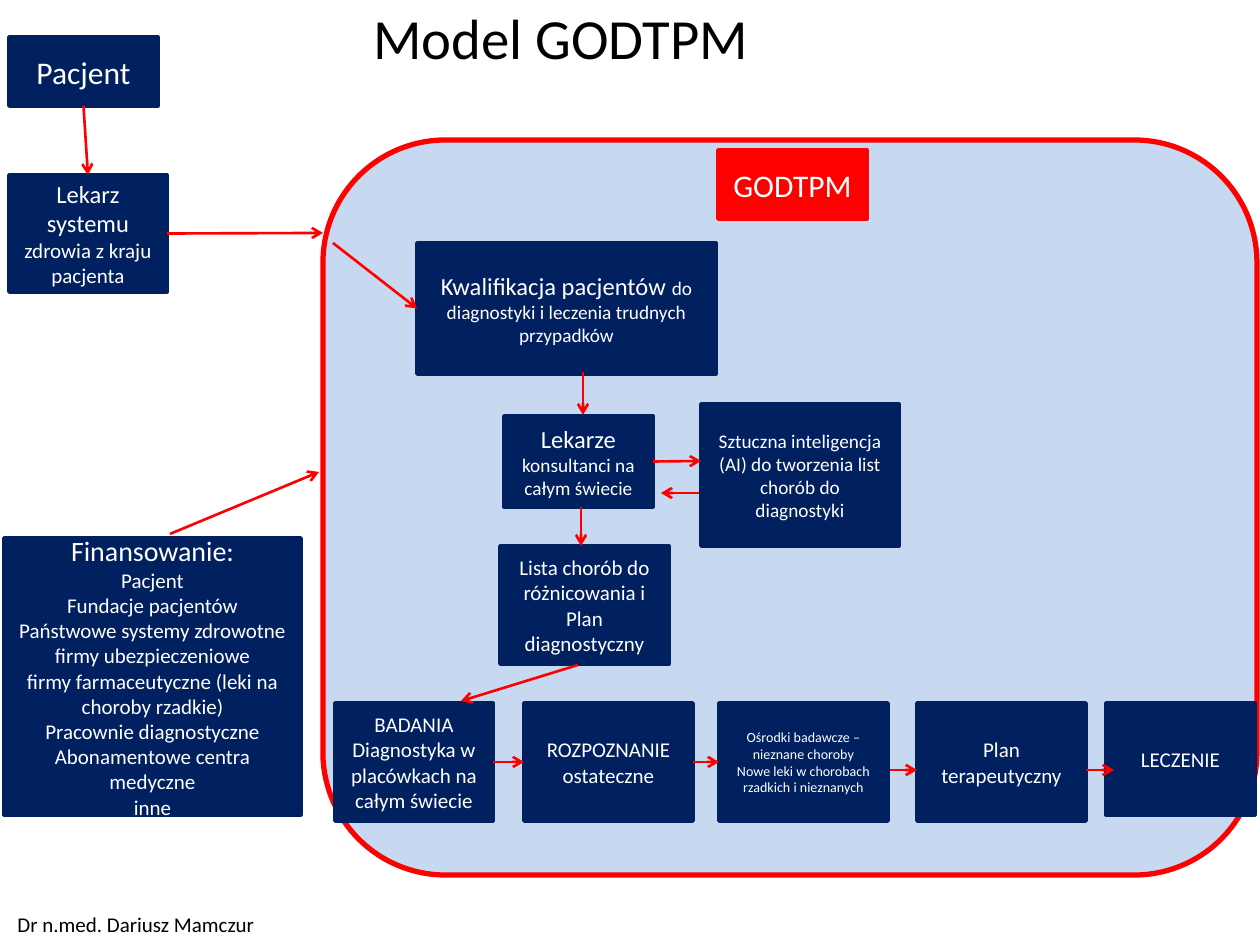
import dataclasses
import typing

import pptx
import pptx.dml.color
import pptx.enum.shapes
import pptx.enum.text
import pptx.oxml
import pptx.oxml.ns
import pptx.util

RGB = pptx.dml.color.RGBColor
NAVY = RGB(0x00, 0x20, 0x60)
RED = RGB(0xFF, 0x00, 0x00)
PALE = RGB(0xC6, 0xD9, 0xF1)
WHITE = RGB(0xFF, 0xFF, 0xFF)
BLACK = RGB(0x00, 0x00, 0x00)
FONT = "Calibri"
SCALE = 914400 / 126
TOP, LEFT, BOTTOM, RIGHT = range(4)
ROW = 703
ALIGN = pptx.enum.text.PP_ALIGN
KIND = pptx.enum.shapes.MSO_SHAPE


class Run(typing.NamedTuple):
    text: str
    size: float


@dataclasses.dataclass(frozen=True)
class Box:
    name: str
    area: tuple[int, int, int, int]
    paras: tuple[tuple[Run, ...], ...]
    fill: RGB = NAVY


@dataclasses.dataclass(frozen=True)
class Arrow:
    start: tuple[int, int]
    end: tuple[int, int]
    source: tuple[str, int] | None = None
    target: tuple[str, int] | None = None


def lines(size: float, *texts: str) -> tuple[tuple[Run, ...], ...]:
    return tuple((Run(text, size),) for text in texts)


BOXES = (
    Box("patient", (9, 37, 149, 69), lines(18, "Pacjent")),
    Box("doctor", (9, 175, 158, 117),
        ((Run("Lekarz systemu ", 14), Run("zdrowia z kraju pacjenta", 12)),)),
    Box("list", (500, 546, 169, 118),
        lines(12, "Lista chorób do różnicowania i", "Plan diagnostyczny")),
    Box("centre", (718, 150, 149, 69), lines(18, "GODTPM"), RED),
    Box("funding", (4, 538, 297, 277),
        lines(16, "Finansowanie:") + lines(
            12, "Pacjent", "Fundacje pacjentów",
            "Państwowe systemy zdrowotne firmy ubezpieczeniowe",
            "firmy farmaceutyczne (leki na choroby rzadkie)",
            "Pracownie diagnostyczne", "Abonamentowe centra medyczne", "inne")),
    Box("intake", (417, 243, 299, 131),
        ((Run("Kwalifikacja pacjentów ", 14),
          Run("do diagnostyki i leczenia trudnych przypadków", 11)),)),
    Box("experts", (504, 416, 149, 91),
        ((Run("Lekarze ", 14), Run("konsultanci na całym świecie", 11)),)),
    Box("machine", (701, 404, 198, 142),
        lines(11, "Sztuczna inteligencja (AI) do tworzenia list chorób do diagnostyki")),
    Box("result", (524, ROW, 169, 118), lines(12, "ROZPOZNANIE ostateczne")),
    Box("tests", (335, ROW, 158, 118),
        lines(12, "BADANIA", "Diagnostyka w placówkach na całym świecie")),
    Box("plan", (917, ROW, 169, 118), lines(12, "Plan terapeutyczny")),
    Box("cure", (1106, ROW, 149, 112), lines(12, "LECZENIE")),
    Box("research", (719, ROW, 169, 118),
        lines(8, "Ośrodki badawcze – nieznane choroby",
              "Nowe leki w chorobach rzadkich i nieznanych")),
)

ARROWS = (
    Arrow((84, 106), (88, 175), ("patient", BOTTOM), ("doctor", TOP)),
    Arrow((168, 233), (323, 233), ("doctor", RIGHT)),
    Arrow((170, 534), (319, 472)),
    Arrow((333, 243), (416, 307), None, ("intake", LEFT)),
    Arrow((583, 372), (583, 415)),
    Arrow((653, 461), (701, 461), ("experts", RIGHT)),
    Arrow((581, 507), (581, 546)),
    Arrow((699, 493), (661, 493)),
    Arrow((578, 665), (461, 701)),
    Arrow((491, 760), (522, 760), ("tests", RIGHT), ("result", LEFT)),
    Arrow((689, 760), (719, 760), ("result", RIGHT), ("research", LEFT)),
    Arrow((1086, 770), (1114, 770)),
    Arrow((890, 770), (917, 770)),
)


def emu(*values: int) -> list[int]:
    return [round(value * SCALE) for value in values]


def style(run, size: float, color: RGB) -> None:
    run.font.name = FONT
    run.font.size = pptx.util.Pt(size)
    run.font.color.rgb = color


def write(shape, paras, color: RGB, align, anchor) -> None:
    frame = shape.text_frame
    frame.word_wrap = True
    frame.vertical_anchor = anchor
    frame.text = "\n".join(runs[0].text for runs in paras)
    for para, runs in zip(frame.paragraphs, paras):
        para.alignment = align
        for extra in runs[1:]:
            para.add_run().text = extra.text
        for part, run in zip(para.runs, runs):
            style(part, run.size, color)


def block(slide, kind, area, fill: RGB, edge: RGB, width: float):
    shape = slide.shapes.add_shape(kind, *emu(*area))
    shape.shadow.inherit = False
    shape.fill.solid()
    shape.fill.fore_color.rgb = fill
    shape.line.color.rgb = edge
    shape.line.width = pptx.util.Pt(width)
    return shape


def draw_box(slide, box: Box):
    shape = block(slide, KIND.RECTANGLE, box.area, box.fill, box.fill, 2)
    write(shape, box.paras, WHITE, ALIGN.CENTER, pptx.enum.text.MSO_ANCHOR.MIDDLE)
    return shape


def draw_arrow(slide, arrow: Arrow, shapes: dict) -> None:
    line = slide.shapes.add_connector(
        pptx.enum.shapes.MSO_CONNECTOR.STRAIGHT, *emu(*arrow.start, *arrow.end))
    if arrow.source:
        name, side = arrow.source
        line.begin_connect(shapes[name], side)
    if arrow.target:
        name, side = arrow.target
        line.end_connect(shapes[name], side)
    line.line.color.rgb = RED
    line.line.width = pptx.util.Pt(1.5)
    space = pptx.oxml.ns.nsdecls("a")
    stroke = line.line._get_or_add_ln()
    stroke.append(pptx.oxml.parse_xml(f'<a:tailEnd {space} type="arrow"/>'))
    line._element.spPr.append(pptx.oxml.parse_xml(f"<a:effectLst {space}/>"))


def main() -> None:
    deck = pptx.Presentation()
    deck.slide_width, deck.slide_height = emu(1260, 945)
    slide = deck.slides.add_slide(deck.slide_layouts[5])
    title = slide.shapes.title
    title.left, title.top, title.width, title.height = emu(-6, 3, 1134, 68)
    write(title, lines(32.4, "Model GODTPM"), BLACK, ALIGN.CENTER,
          pptx.enum.text.MSO_ANCHOR.MIDDLE)
    block(slide, KIND.ROUNDED_RECTANGLE, (323, 140, 934, 735), PALE, RED, 3)
    author = slide.shapes.add_textbox(*emu(5, 905, 347, 38))
    write(author, lines(12, "Dr n.med. Dariusz Mamczur"), BLACK, ALIGN.LEFT,
          pptx.enum.text.MSO_ANCHOR.TOP)
    shapes = {box.name: draw_box(slide, box) for box in BOXES}
    for arrow in ARROWS:
        draw_arrow(slide, arrow, shapes)
    deck.save("out.pptx")


if __name__ == "__main__":
    main()
